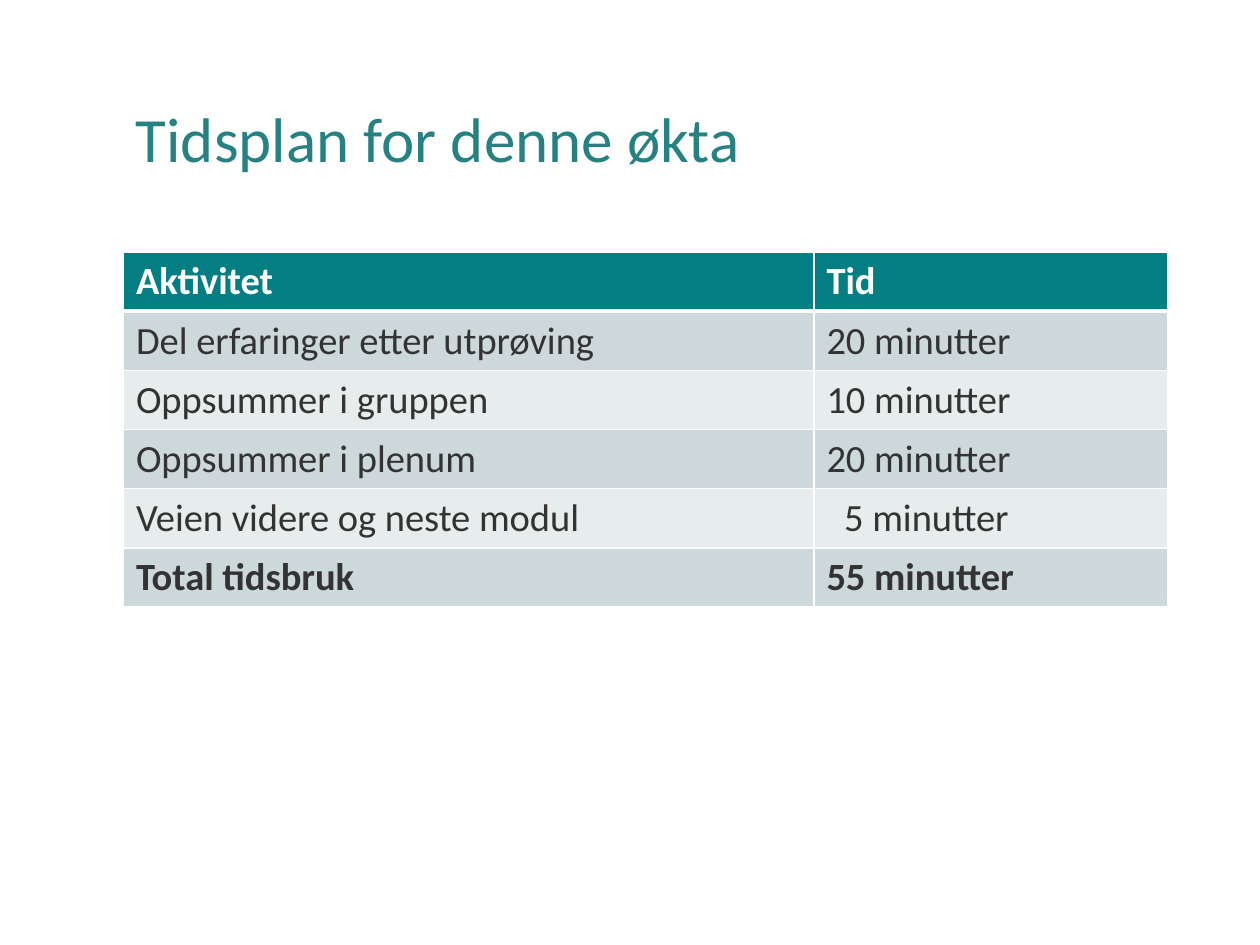
"""Build a slide with the time plan for a session."""
import pptx
import pptx.dml.color
import pptx.enum.text
import pptx.oxml.ns
import pptx.util
import lxml.etree

Inches = pptx.util.Inches
RGBColor = pptx.dml.color.RGBColor

TITLE = RGBColor(0x26, 0x81, 0x83)
HEAD = RGBColor(0x03, 0x7F, 0x83)
DARK = RGBColor(0xCC, 0xD8, 0xD9)
LIGHT = RGBColor(0xE7, 0xEC, 0xED)
INK = RGBColor(0x33, 0x33, 0x33)
WHITE = RGBColor(0xFF, 0xFF, 0xFF)

LEFT = Inches(0.98)
WIDTHS = (5.48, 2.81)
HEIGHT = 0.47
PLAN = (
    ("Aktivitet", "Tid"),
    ("Del erfaringer etter utprøving", "20 minutter"),
    ("Oppsummer i gruppen", "10 minutter"),
    ("Oppsummer i plenum", "20 minutter"),
    ("Veien videre og neste modul", "5 minutter"),
    ("Total tidsbruk", "55 minutter"),
)


def write(frame, text, size=22, color=INK, bold=False, space=1.0):
    par = frame.paragraphs[0]
    par.line_spacing = space
    run = par.add_run()
    run.text = text
    font = run.font
    font.name = "Calibri"
    font.size = pptx.util.Pt(size)
    font.bold = bold
    font.color.rgb = color


def add_title(slide, text):
    box = slide.shapes.add_textbox(LEFT, Inches(0.4), Inches(sum(WIDTHS)), Inches(1.45))
    frame = box.text_frame
    frame.word_wrap = True
    frame.vertical_anchor = pptx.enum.text.MSO_ANCHOR.MIDDLE
    write(frame, text, size=36, color=TITLE, space=0.9)


def add_edge(cell, side, width):
    name = pptx.oxml.ns.qn
    props = cell._tc.get_or_add_tcPr()
    line = lxml.etree.SubElement(props, name(f"a:ln{side}"), w=str(pptx.util.Pt(width)))
    fill = lxml.etree.SubElement(line, name("a:solidFill"))
    lxml.etree.SubElement(fill, name("a:srgbClr"), val=str(WHITE))


def style_cell(cell, row):
    edges = {"L": 1, "R": 1, "T": 3 if row == 1 else 1, "B": 3 if row == 0 else 1}
    for side, width in edges.items():
        add_edge(cell, side, width)
    cell.fill.solid()
    cell.fill.fore_color.rgb = HEAD if row == 0 else DARK if row % 2 else LIGHT


def add_plan(slide, plan):
    last = len(plan) - 1
    table = slide.shapes.add_table(
        len(plan), len(WIDTHS), LEFT, Inches(2),
        Inches(sum(WIDTHS)), Inches(HEIGHT * len(plan))).table
    for col, width in zip(table.columns, WIDTHS):
        col.width = Inches(width)
    for row, texts in enumerate(plan):
        table.rows[row].height = Inches(HEIGHT)
        for col, text in enumerate(texts):
            cell = table.cell(row, col)
            style_cell(cell, row)
            write(cell.text_frame, text, color=INK if row else WHITE,
                  bold=row in (0, last))
            if text.startswith("5 "):
                cell.margin_left = Inches(0.24)


def main():
    deck = pptx.Presentation()
    deck.slide_width = Inches(10)
    deck.slide_height = Inches(7.5)
    slide = deck.slides.add_slide(deck.slide_layouts[6])
    add_title(slide, "Tidsplan for denne økta")
    add_plan(slide, PLAN)
    deck.save("out.pptx")


if __name__ == "__main__":
    main()
